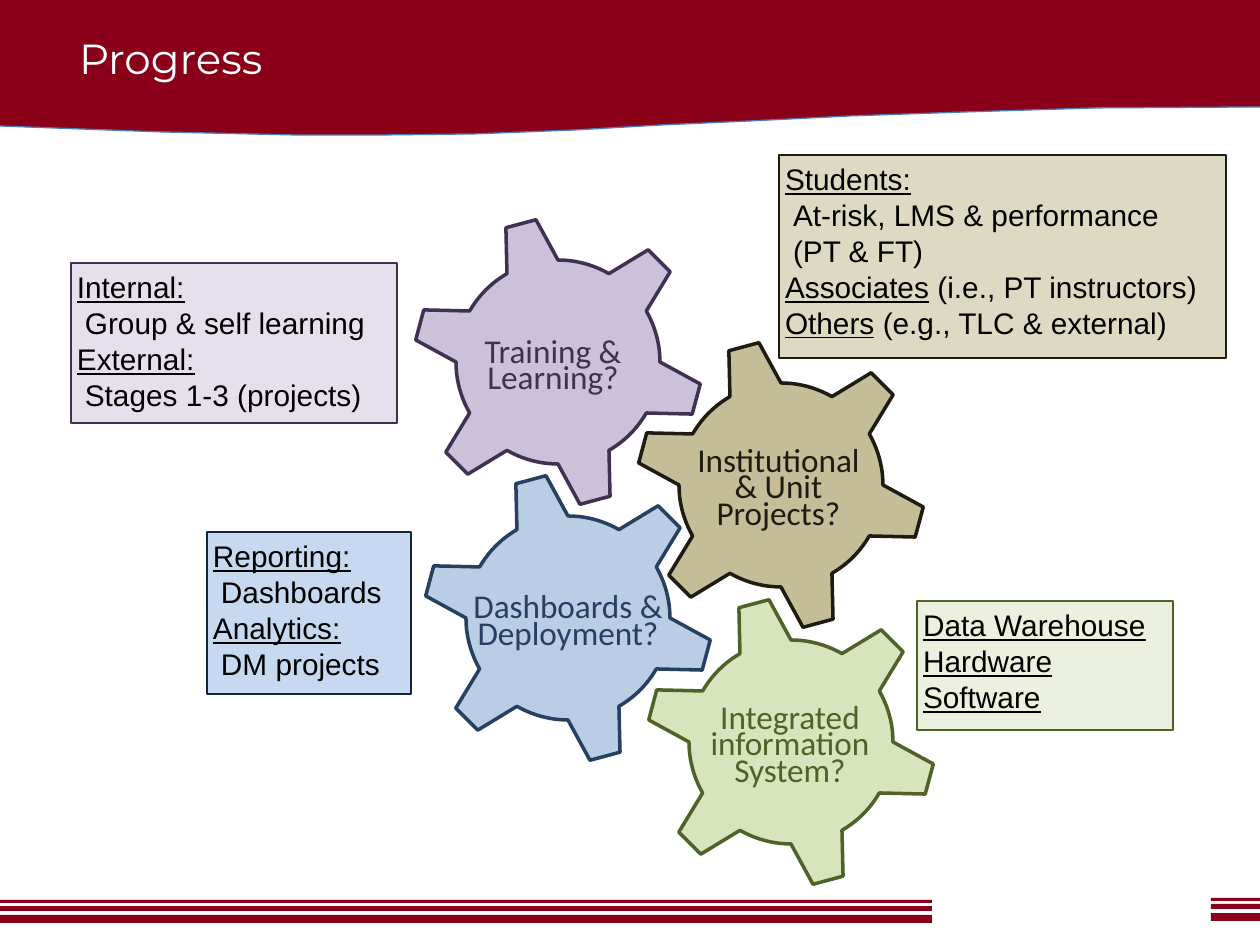
from math import cos, radians, sin

from pptx import Presentation
from pptx.dml.color import RGBColor
from pptx.enum.shapes import MSO_SHAPE
from pptx.enum.text import MSO_ANCHOR, PP_ALIGN
from pptx.util import Pt

RECT = MSO_SHAPE.RECTANGLE
TOP, MIDDLE = MSO_ANCHOR.TOP, MSO_ANCHOR.MIDDLE
LEFT, CENTER = PP_ALIGN.LEFT, PP_ALIGN.CENTER

CRIMSON = RGBColor(0x89, 0x00, 0x18)
WAVE_EDGE = RGBColor(0x4A, 0x7E, 0xBB)
WHITE = RGBColor(0xFF, 0xFF, 0xFF)
BLACK = RGBColor(0x00, 0x00, 0x00)
PURPLE = RGBColor(0x40, 0x31, 0x52)
LILAC = RGBColor(0xCC, 0xC1, 0xDA)
PALE_LILAC = RGBColor(0xE6, 0xE0, 0xEC)
UMBER = RGBColor(0x1E, 0x1C, 0x11)
TAN = RGBColor(0xC4, 0xBD, 0x97)
PALE_TAN = RGBColor(0xDD, 0xD9, 0xC3)
NAVY = RGBColor(0x25, 0x40, 0x61)
DARK_NAVY = RGBColor(0x10, 0x25, 0x3F)
SKY = RGBColor(0xB9, 0xCD, 0xE5)
PALE_SKY = RGBColor(0xC6, 0xD9, 0xF1)
OLIVE = RGBColor(0x4F, 0x62, 0x28)
LIME = RGBColor(0xD7, 0xE4, 0xBD)
PALE_LIME = RGBColor(0xEB, 0xF1, 0xDE)

EMU_PER_PX = 914400 / 126

# Gear geometry, shared by all four gears
ROOT_RADIUS, TIP_RADIUS = 102, 144
TOOTH_ANGLES = range(-45, 315, 60)

# Lower edge of the header, from right to left
WAVE = [(1262, 107), (1096, 108), (966, 112), (851, 116), (751, 121),
        (662, 125), (575, 130), (475, 134), (385, 135), (294, 135),
        (161, 132), (-2, 126)]

# Centre, label box, label, fill, line
GEARS = [
    ((558, 362), (471, 338, 164, 64), "Training & Learning?", LILAC, PURPLE),
    ((781, 485), (689, 447, 179, 91), "Institutional & Unit Projects?", TAN, UMBER),
    ((568, 618), (466, 580, 204, 91), "Dashboards & Deployment?", SKY, NAVY),
    ((791, 742), (701, 704, 178, 91), "Integrated information System?", LIME, OLIVE),
]

# Box, fill, line, then lines as (underlined part, plain part)
NOTES = [
    ((71, 263, 326, 160), PALE_LILAC, PURPLE,
     [("Internal:", ""), ("", "Group & self learning"),
      ("External:", ""), ("", "Stages 1-3 (projects)")]),
    ((779, 155, 447, 203), PALE_TAN, UMBER,
     [("Students:", ""), ("", "At-risk, LMS & performance"), ("", "(PT & FT)"),
      ("Associates", " (i.e., PT instructors)"),
      ("Others", " (e.g., TLC & external)")]),
    ((207, 532, 204, 162), PALE_SKY, DARK_NAVY,
     [("Reporting:", ""), ("", "Dashboards"),
      ("Analytics:", ""), ("", "DM projects")]),
    ((917, 601, 256, 129), PALE_LIME, OLIVE,
     [("Data Warehouse", ""), ("Hardware", ""), ("Software", "")]),
]


def px(value):
    return round(value * EMU_PER_PX)


def set_all(target, values):
    for name, value in values.items():
        setattr(target, name, value)


def paint(shape, fill, line=None, weight=0.75):
    shape.shadow.inherit = False
    shape.fill.solid()
    shape.fill.fore_color.rgb = fill
    if line is None:
        shape.line.fill.background()
    else:
        shape.line.color.rgb = line
        shape.line.width = Pt(weight)


def add_rect(slide, box, fill, line=None):
    rect = slide.shapes.add_shape(RECT, *map(px, box))
    paint(rect, fill, line)
    return rect


def add_outline(slide, points, fill, line, weight):
    (start_x, start_y), *rest = [(px(x), px(y)) for x, y in points]
    builder = slide.shapes.build_freeform(start_x, start_y)
    builder.add_line_segments(rest, close=True)
    paint(builder.convert_to_shape(), fill, line, weight)


def set_frame(frame, inset, anchor):
    set_all(frame, {"word_wrap": True, "vertical_anchor": anchor,
                    "margin_left": px(inset), "margin_right": px(inset),
                    "margin_top": px(inset), "margin_bottom": px(inset)})


def add_run(paragraph, text, size, family, color, underline=False):
    run = paragraph.add_run()
    run.text = text
    set_all(run.font, {"size": Pt(size), "name": family, "underline": underline})
    run.font.color.rgb = color


def add_label(slide, box, text, size, family, color, inset, anchor, align, spacing):
    frame = slide.shapes.add_textbox(*map(px, box)).text_frame
    set_frame(frame, inset, anchor)
    paragraph = frame.paragraphs[0]
    set_all(paragraph, {"alignment": align, "line_spacing": spacing})
    add_run(paragraph, text, size, family, color)


def add_header(slide, box):
    left, top, width, height = box
    corners = [(left - 2, top - 4), (left + width + 2, top - 4)]
    wave = [(left + x, top + y) for x, y in WAVE]
    add_outline(slide, corners + wave, CRIMSON, WAVE_EDGE, 0.75)
    add_label(slide, (left + 73, top + 26, width - 144, height - 51), "Progress",
              24, "Montserrat", WHITE, 6, TOP, LEFT, None)


def add_stripes(slide, left, top, width):
    for offset, height in ((0, 3), (6, 5), (15, 8)):
        add_rect(slide, (left, top + offset, width, height), CRIMSON)


def gear_points(center_x, center_y):
    polar = []
    for angle in TOOTH_ANGLES:
        polar += [(TIP_RADIUS, angle - 6.2), (TIP_RADIUS, angle + 6.2)]
        polar += [(ROOT_RADIUS, angle + turn) for turn in range(15, 46, 3)]
    return [(center_x + radius * cos(radians(angle)),
             center_y + radius * sin(radians(angle))) for radius, angle in polar]


def add_gear(slide, center, label_box, label, fill, line):
    add_outline(slide, gear_points(*center), fill, line, 2)
    add_label(slide, label_box, label, 19, "Calibri", line, 5, MIDDLE, CENTER, Pt(15))


def add_note(slide, box, fill, line, rows):
    frame = add_rect(slide, box, fill, line).text_frame
    set_frame(frame, 6, TOP)
    for index, (heading, detail) in enumerate(rows):
        paragraph = frame.add_paragraph() if index else frame.paragraphs[0]
        set_all(paragraph, {"alignment": LEFT, "line_spacing": Pt(20.5)})
        if not heading:
            paragraph._p.get_or_add_pPr().set("marL", str(px(8)))
        for text, underline in ((heading, True), (detail, False)):
            if text:
                add_run(paragraph, text, 17, "Arial", BLACK, underline)


def main():
    deck = Presentation()
    set_all(deck, {"slide_width": px(1260), "slide_height": px(945)})
    slide = deck.slides.add_slide(deck.slide_layouts[6])

    # Header and footer bands
    add_header(slide, (0, 0, 1260, 135))
    add_stripes(slide, 0, 900, 932)
    add_stripes(slide, 1211, 898, 49)

    # Interlocking gears with their notes
    for gear in GEARS:
        add_gear(slide, *gear)
    for note in NOTES:
        add_note(slide, *note)

    deck.save("out.pptx")


if __name__ == "__main__":
    main()
